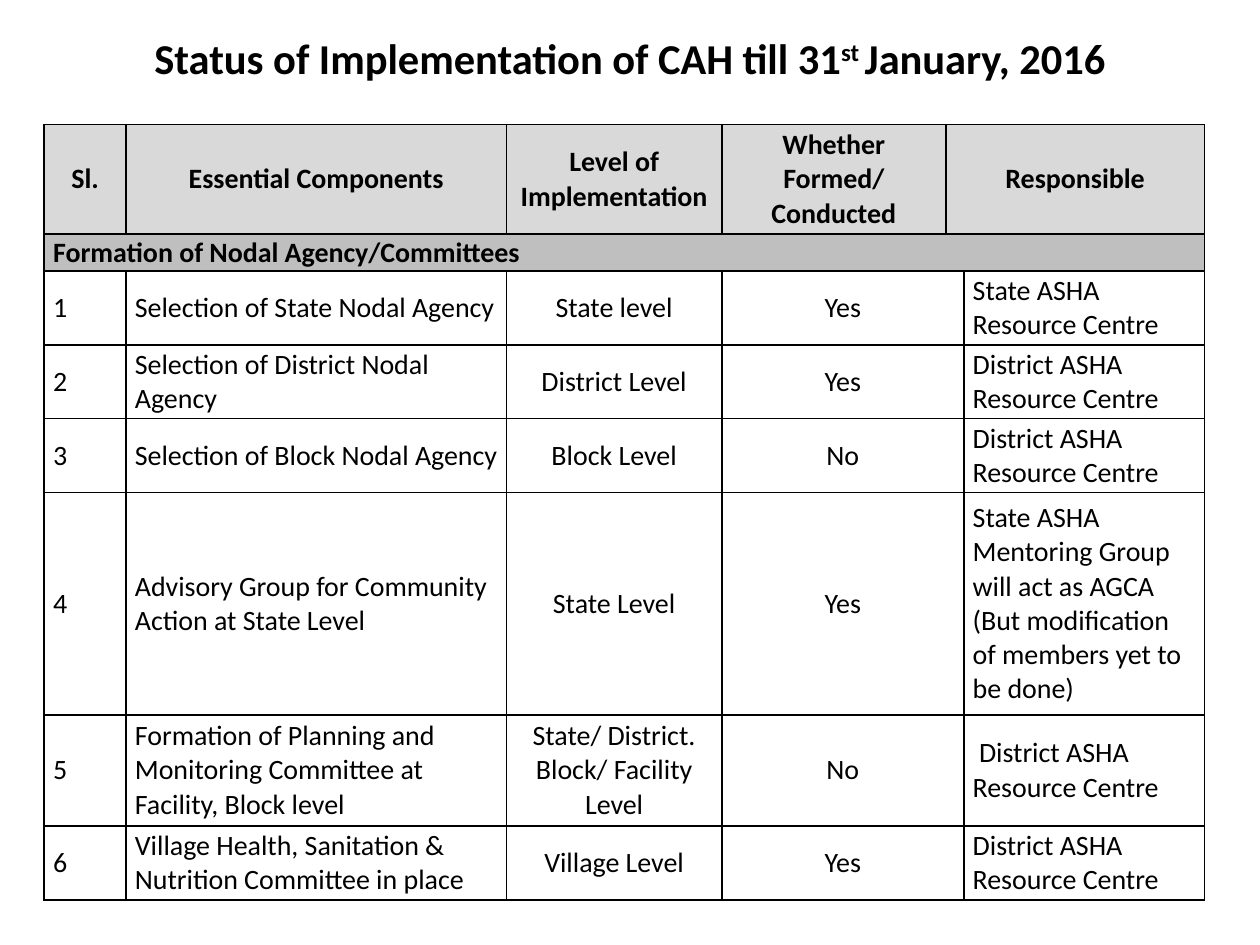
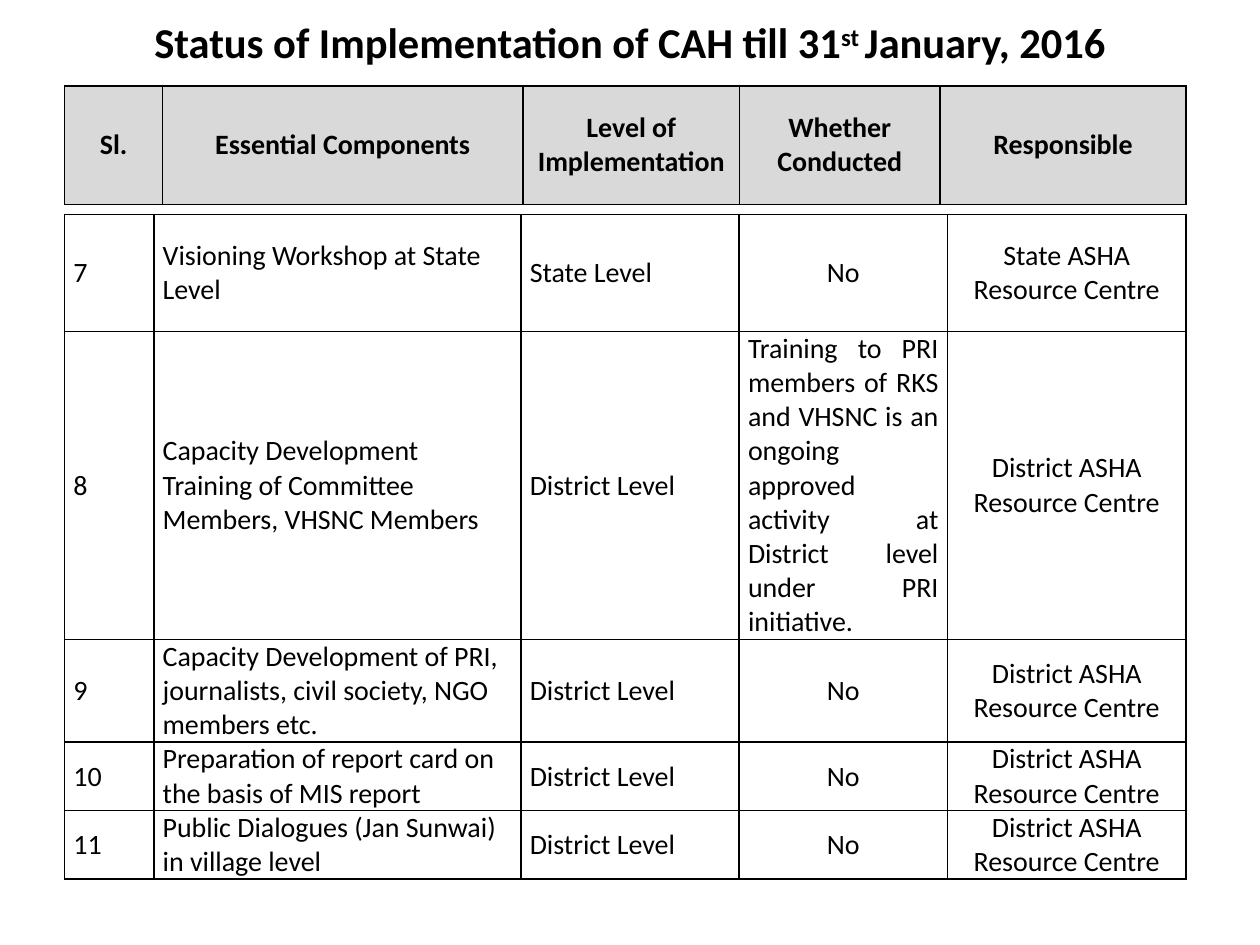
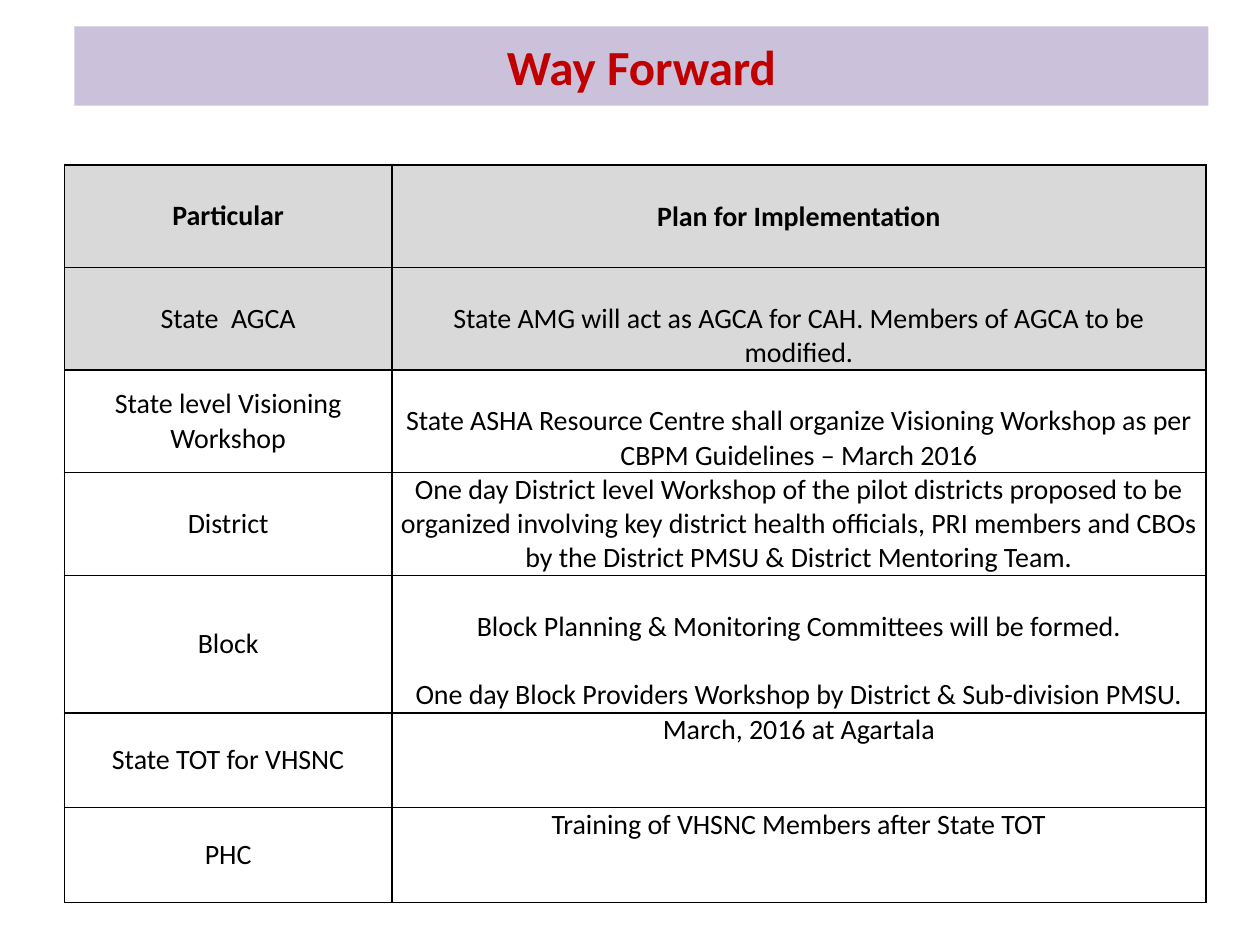
from dataclasses import dataclass

from lxml import etree
from pptx import Presentation
from pptx import util as u
from pptx.dml.color import RGBColor
from pptx.enum import text
from pptx.oxml import ns

BLACK = RGBColor(0x00, 0x00, 0x00)
RED = RGBColor(0xC0, 0x00, 0x00)
LILAC = RGBColor(0xCC, 0xC1, 0xDA)
LIGHT_GREY = RGBColor(0xD9, 0xD9, 0xD9)
MID_GREY = RGBColor(0xBF, 0xBF, 0xBF)

FONT = "Calibri"
TABLE_SIZE = u.Pt(16)
LINE_HEIGHT = u.Cm(0.69)
CELL_MARGIN = u.Cm(0.18)
ALIGNMENTS = {"l": text.PP_ALIGN.LEFT, "c": text.PP_ALIGN.CENTER, "j": text.PP_ALIGN.JUSTIFY}

STATUS_TITLE = (("Status of Implementation of CAH till 31", False), ("st ", True), ("January, 2016", False))
STATE_CENTRE = "State ASHA Resource Centre"
DISTRICT_CENTRE = "District ASHA Resource Centre"


@dataclass
class Row:
    """A table row in which None widens the cell to its left."""
    height: float
    alignment: str
    texts: tuple
    fill: RGBColor = None
    bold: bool = False


def header(height, *texts):
    """Return a bold, centred row on light grey."""
    return Row(height, "c" * len(texts), texts, LIGHT_GREY, True)


def format_font(font, size, color, bold):
    """Give a font the deck's typeface with a size, colour and weight."""
    font.name, font.size, font.bold = FONT, size, bold
    font.color.rgb = color


def add_title(slide, left, top, height, parts, size, color=BLACK):
    """Place the title placeholder and fill it with (wording, raised) parts."""
    title = slide.shapes.title
    title.left, title.top = u.Cm(left), u.Cm(top)
    title.width, title.height = u.Cm(22.86), u.Cm(height)
    frame = title.text_frame
    frame.auto_size = text.MSO_AUTO_SIZE.NONE
    frame.vertical_anchor = text.MSO_ANCHOR.MIDDLE
    paragraph = frame.paragraphs[0]
    paragraph.alignment = text.PP_ALIGN.CENTER
    for wording, raised in parts:
        run = paragraph.add_run()
        run.text = wording
        format_font(run.font, u.Pt(size), color, True)
        if raised:
            run._r.get_or_add_rPr().set("baseline", "30000")
    return title


def add_status_title(slide, height):
    """Add the shared status title, set high in its box."""
    title = add_title(slide, 1.27, 0.53, height, STATUS_TITLE, 24.3)
    title.text_frame.margin_top = 0
    title.text_frame.margin_bottom = u.Cm(0.56)


def add_borders(cell):
    """Draw a black one-point line on each side of a cell."""
    properties = cell._tc.get_or_add_tcPr()
    for index, side in enumerate("LRTB"):
        line = etree.Element(ns.qn(f"a:ln{side}"), w=str(u.Pt(1)))
        fill = etree.SubElement(line, ns.qn("a:solidFill"))
        etree.SubElement(fill, ns.qn("a:srgbClr"), val=str(BLACK))
        properties.insert(index, line)


def format_cell(cell, row, alignment):
    """Apply margins, fill, borders and text style to a cell."""
    cell.margin_left = cell.margin_right = CELL_MARGIN
    cell.margin_top = cell.margin_bottom = 0
    cell.vertical_anchor = text.MSO_ANCHOR.MIDDLE
    if row.fill is None:
        cell.fill.background()
    else:
        cell.fill.solid()
        cell.fill.fore_color.rgb = row.fill
    add_borders(cell)
    for paragraph in cell.text_frame.paragraphs:
        paragraph.alignment = ALIGNMENTS[alignment]
        format_font(paragraph.font, TABLE_SIZE, BLACK, row.bold)
        for run in paragraph.runs:
            format_font(run.font, TABLE_SIZE, BLACK, row.bold)


def add_table(slide, left, top, widths, rows):
    """Add a bordered table with column widths in centimetres."""
    height = sum(row.height for row in rows)
    frame = slide.shapes.add_table(len(rows), len(widths), u.Cm(left), u.Cm(top),
                                   u.Cm(sum(widths)), u.Cm(height))
    table = frame.table
    table.first_row = table.horz_banding = False
    for column, width in zip(table.columns, widths):
        column.width = u.Cm(width)
    for row_index, row in enumerate(rows):
        table.rows[row_index].height = u.Cm(row.height)
        start = 0
        for column_index, wording in enumerate(row.texts):
            cell = table.cell(row_index, column_index)
            if wording is not None:
                start = column_index
                cell.text_frame.text = wording
            format_cell(cell, row, row.alignment[column_index])
            last = column_index + 1 == len(widths) or row.texts[column_index + 1] is not None
            if last and start < column_index:
                table.cell(row_index, start).merge(cell)
    return table


def align_plans(table, lowered_rows):
    """Set the plans at the top of their cells, some one line lower."""
    for index in range(len(table.rows)):
        cell = table.cell(index, 1)
        cell.vertical_anchor = text.MSO_ANCHOR.TOP
        if index in lowered_rows:
            cell.margin_top = LINE_HEIGHT
        for paragraph in cell.text_frame.paragraphs[1:]:
            paragraph.space_before = LINE_HEIGHT


def build_committees(slide):
    """Build the status of agencies and committees."""
    add_status_title(slide, 1.8)
    items = (
        (1.49, "Selection of State Nodal Agency", "State level", "Yes", STATE_CENTRE),
        (1.49, "Selection of District Nodal Agency", "District Level", "Yes", DISTRICT_CENTRE),
        (1.49, "Selection of Block Nodal Agency", "Block Level", "No", DISTRICT_CENTRE),
        (4.48, "Advisory Group for Community Action at State Level", "State Level", "Yes",
         "State ASHA Mentoring Group will act as AGCA\n(But modification of members yet to be done)"),
        (2.24, "Formation of Planning and Monitoring Committee at Facility, Block level",
         "State/ District. Block/ Facility Level", "No", " " + DISTRICT_CENTRE),
        (1.49, "Village Health, Sanitation & Nutrition Committee in place", "Village Level", "Yes",
         DISTRICT_CENTRE),
    )
    rows = [
        header(2.21, "Sl.", "Essential Components", "Level of Implementation",
               "Whether Formed/ Conducted", "Responsible", None),
        Row(0.74, "llllll", ("Formation of Nodal Agency/Committees",) + (None,) * 5, MID_GREY, True),
    ]
    for number, (height, component, level, formed, responsible) in enumerate(items, 1):
        rows.append(Row(height, "llcccl", (str(number), component, level, formed, None, responsible)))
    add_table(slide, 0.89, 2.51, (1.65, 7.67, 4.34, 4.52, 0.36, 4.85), rows)


def build_activities(slide):
    """Build the status of workshops, training and dialogues."""
    add_status_title(slide, 1.19)
    training = ("Training to PRI members of RKS and VHSNC is an ongoing approved activity "
                "at District level under PRI initiative.")
    items = (
        (2.36, "Visioning Workshop at State Level", "State Level", "No", STATE_CENTRE),
        (6.2, "Capacity Development Training of Committee Members, VHSNC Members",
         "District Level", training, DISTRICT_CENTRE),
        (2.06, "Capacity Development of PRI, journalists, civil society, NGO members etc.",
         "District Level", "No", DISTRICT_CENTRE),
        (1.38, "Preparation of report card on the basis of MIS report",
         "District Level", "No", DISTRICT_CENTRE),
        (1.38, "Public Dialogues (Jan Sunwai) in village level",
         "District Level", "No", DISTRICT_CENTRE),
    )
    rows = [Row(height, "llljc" if conducted == training else "lllcc",
                (str(number), component, level, conducted, responsible))
            for number, (height, component, level, conducted, responsible) in enumerate(items, 7)]
    add_table(slide, 1.3, 4.32, (1.8, 7.4, 4.4, 4.2, 4.81), rows)
    headings = header(2.39, "Sl.", "Essential Components", "Level of Implementation",
                      "Whether Conducted", "Responsible", None)
    add_table(slide, 1.3, 1.73, (1.98, 7.26, 4.37, 4.04, 0.36, 4.6), [headings])


def build_way_forward(slide):
    """Build the plan for each level."""
    title = add_title(slide, 1.5, 0.53, 1.6, (("Way Forward", False),), 28, RED)
    title.fill.solid()
    title.fill.fore_color.rgb = LILAC
    plans = (
        (2.06, "State level Visioning Workshop",
         "State ASHA Resource Centre shall organize Visioning Workshop as per "
         "CBPM Guidelines – March 2016"),
        (2.06, "District",
         "One day District level Workshop of the pilot districts proposed to be organized involving "
         "key district health officials, PRI members and CBOs by the District PMSU & "
         "District Mentoring Team."),
        (2.77, "Block",
         "Block Planning & Monitoring Committees will be formed.\n"
         "One day Block Providers Workshop by District & Sub-division PMSU."),
        (1.91, "State TOT for VHSNC", "March, 2016 at Agartala"),
        (1.91, "PHC", "Training of VHSNC Members after State TOT"),
    )
    rows = [
        header(2.06, "Particular", "Plan for Implementation"),
        Row(2.06, "cc", ("State  AGCA",
                         "State AMG will act as AGCA for CAH. Members of AGCA to be modified."),
            LIGHT_GREY),
    ]
    rows += [Row(height, "cc", (particular, plan)) for height, particular, plan in plans]
    table = add_table(slide, 1.3, 3.33, (6.6, 16.41), rows)
    align_plans(table, (0, 1, 2, 4))


def main():
    """Build and save the presentation."""
    presentation = Presentation()
    presentation.slide_width, presentation.slide_height = u.Cm(25.4), u.Cm(19.05)
    title_only = presentation.slide_layouts[5]
    for build in (build_committees, build_activities, build_way_forward):
        build(presentation.slides.add_slide(title_only))
    presentation.save("out.pptx")


if __name__ == "__main__":
    main()
